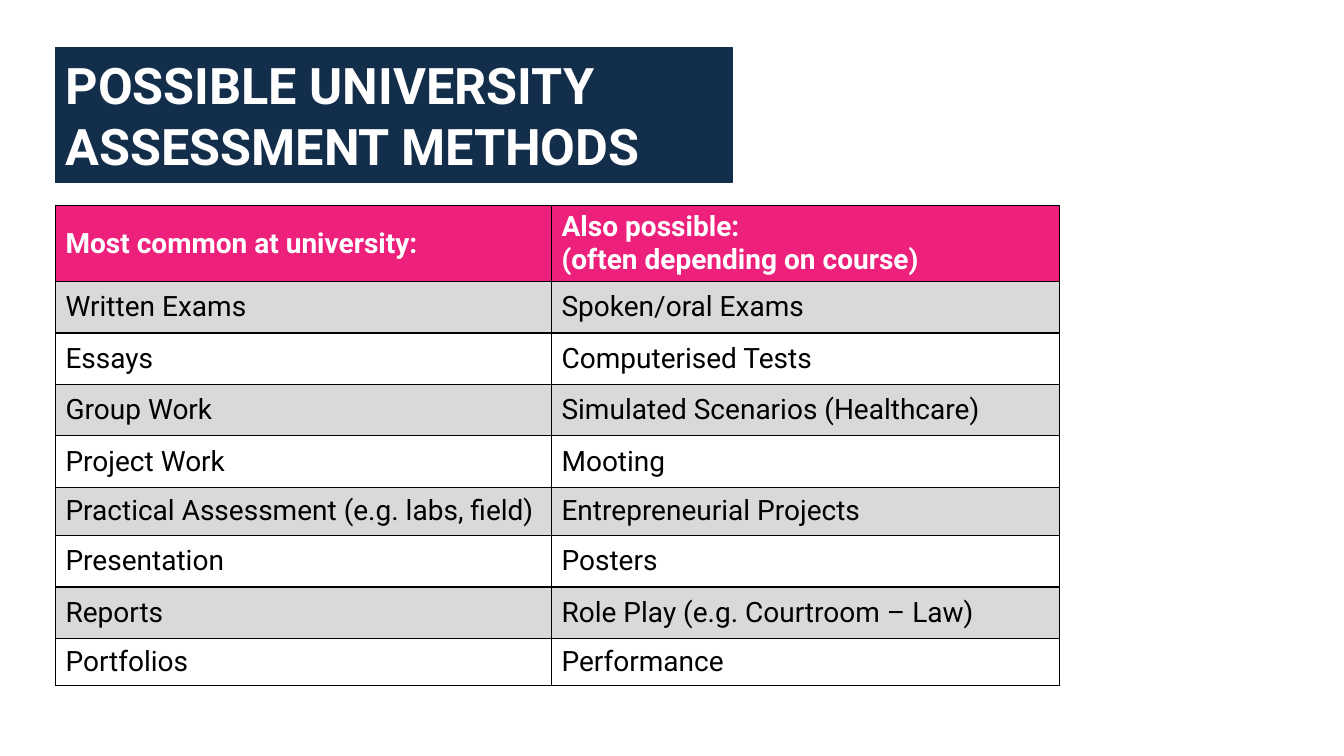
from lxml import etree
from pptx import Presentation
from pptx.dml.color import RGBColor
from pptx.enum.text import MSO_ANCHOR, MSO_AUTO_SIZE, PP_ALIGN
from pptx.oxml.ns import qn
from pptx.util import Pt

PX = 9144  # 100 px to the inch
MID = MSO_ANCHOR.MIDDLE
LEFT = PP_ALIGN.LEFT
NO_FIT = MSO_AUTO_SIZE.NONE

FONT = "Roboto"
NAVY, PINK, GREY = "132E4B", "ED217C", "D9D9D9"
WHITE, BLACK = "FFFFFF", "000000"

TITLE = "POSSIBLE UNIVERSITY ASSESSMENT METHODS"
COLS = [492, 504]
HEIGHTS = [69, 51, 51, 51, 51, 48, 51, 51, 47]
ROWS = [
    (["Most common at university:"],
     ["Also possible:", "(often depending on course)"]),
    (["Written Exams"], ["Spoken/oral Exams"]),
    (["Essays"], ["Computerised Tests"]),
    (["Group Work"], ["Simulated Scenarios (Healthcare)"]),
    (["Project Work"], ["Mooting"]),
    (["Practical Assessment (e.g. labs, field)"], ["Entrepreneurial Projects"]),
    (["Presentation"], ["Posters"]),
    (["Reports"], ["Role Play (e.g. Courtroom – Law)"]),
    (["Portfolios"], ["Performance"]),
]


def px(n):
    return int(n * PX)


def paint(target, color):
    """Give a fill, line fill or font a solid colour."""
    target.solid()
    target.fore_color.rgb = RGBColor.from_string(color)


def write(frame, lines, size, color, bold):
    for i, line in enumerate(lines):
        para = frame.paragraphs[0] if i == 0 else frame.add_paragraph()
        para.alignment = LEFT
        run = para.add_run()
        run.text = line
        font = run.font
        font.name, font.size, font.bold = FONT, Pt(size), bold
        paint(font.fill, color)


def edge(cell, color):
    """Draw a 1 pt border on all four sides, ahead of the cell fill."""
    props = cell._tc.get_or_add_tcPr()
    for i, side in enumerate(("a:lnL", "a:lnR", "a:lnT", "a:lnB")):
        line = etree.Element(qn(side), w=str(Pt(1)))
        fill = etree.SubElement(line, qn("a:solidFill"))
        etree.SubElement(fill, qn("a:srgbClr"), val=color)
        props.insert(i, line)


def add_title(slide, x, y, w, h):
    title = slide.shapes.title
    title.left, title.top, title.width, title.height = map(px, (x, y, w, h))
    paint(title.fill, NAVY)
    paint(title.line.fill, NAVY)
    title.line.width = Pt(1)
    frame = title.text_frame
    frame.word_wrap, frame.auto_size = True, NO_FIT
    frame.vertical_anchor = MID
    write(frame, [TITLE], 36, WHITE, True)


def add_grid(slide, x, y):
    box = map(px, (x, y, sum(COLS), sum(HEIGHTS)))
    table = slide.shapes.add_table(len(ROWS), len(COLS), *box).table
    for col, w in zip(table.columns, COLS):
        col.width = px(w)
    for r, (row, h) in enumerate(zip(ROWS, HEIGHTS)):
        table.rows[r].height = px(h)
        head = r == 0
        for c, lines in enumerate(row):
            cell = table.cell(r, c)
            cell.vertical_anchor = MID
            # Pink header, then grey and white in turn
            paint(cell.fill, PINK if head else GREY if r % 2 else WHITE)
            edge(cell, BLACK)
            write(cell.text_frame, lines, 20, WHITE if head else BLACK, head)


def main():
    deck = Presentation()
    deck.slide_width, deck.slide_height = px(1333), px(750)
    slide = deck.slides.add_slide(deck.slide_layouts[5])
    add_title(slide, 55, 47, 671, 134)
    add_grid(slide, 55, 204)
    deck.save("out.pptx")


if __name__ == "__main__":
    main()
